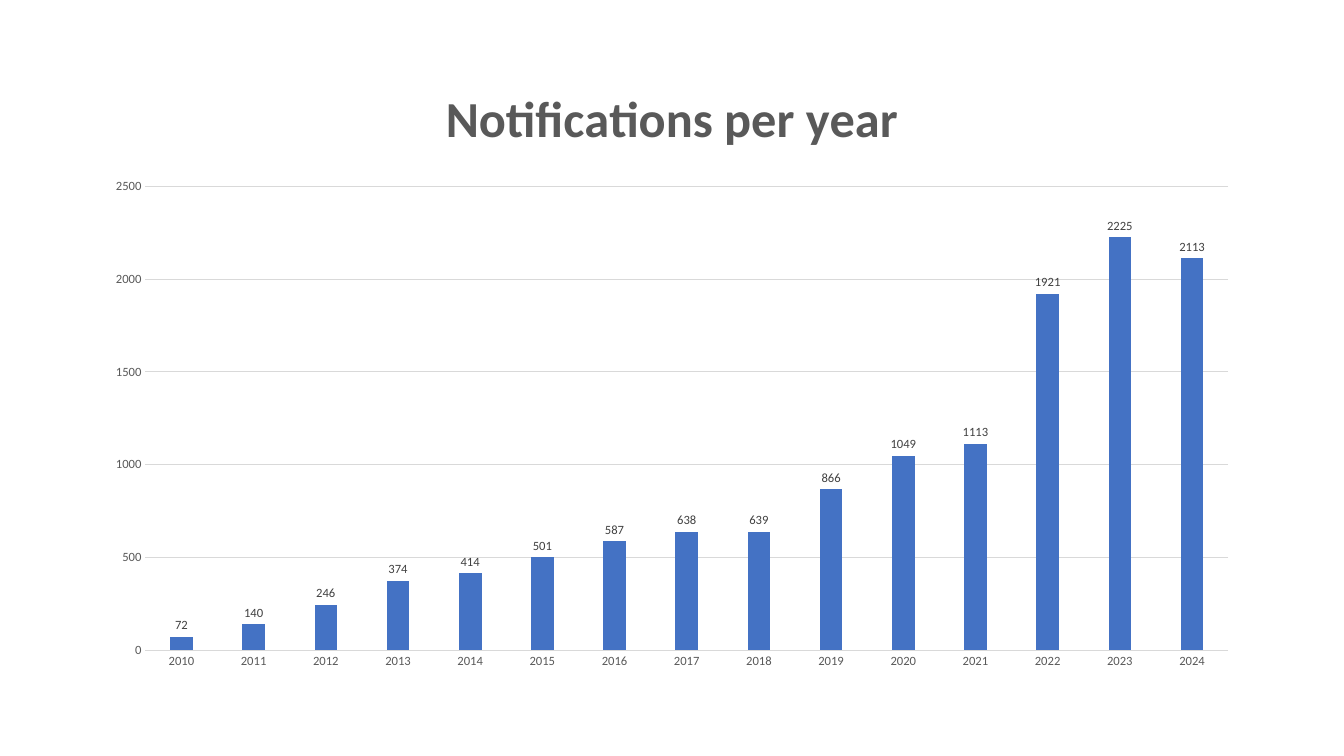
from pptx import Presentation
from pptx.chart.data import CategoryChartData
from pptx.dml.color import RGBColor
from pptx.enum.chart import XL_CHART_TYPE, XL_LABEL_POSITION, XL_TICK_MARK
from pptx.util import Inches, Pt

COLUMNS = XL_CHART_TYPE.COLUMN_CLUSTERED
OUTSIDE_END = XL_LABEL_POSITION.OUTSIDE_END
NO_TICKS = XL_TICK_MARK.NONE

FONT = "Calibri"
BLUE = "4472C4"
GREY = "595959"
DARK_GREY = "404040"
LIGHT_GREY = "D9D9D9"

FIRST_YEAR = 2010
NOTIFICATIONS = [72, 140, 246, 374, 414, 501, 587, 638, 639,
                 866, 1049, 1113, 1921, 2225, 2113]


def rgb(color):
    return RGBColor.from_string(color)


def set_font(font, size, color, bold=False):
    font.name = FONT
    font.size = Pt(size)
    font.bold = bold
    font.color.rgb = rgb(color)


def set_line(line, color, width=0.75):
    line.color.rgb = rgb(color)
    line.width = Pt(width)


def style_axis(axis):
    axis.major_tick_mark = NO_TICKS
    axis.minor_tick_mark = NO_TICKS
    set_font(axis.tick_labels.font, 9, GREY)


def add_column_chart(slide, categories, values):
    data = CategoryChartData()
    data.categories = categories
    data.add_series("Notifications", values)
    frame = slide.shapes.add_chart(COLUMNS, Inches(0.92), Inches(0.56),
                                   Inches(11.5), Inches(6.2), data)
    chart = frame.chart
    chart.has_legend = False
    set_font(chart.font, 10, "000000")
    return chart


def style_title(chart, text):
    chart.has_title = True
    chart.chart_title.include_in_layout = False
    paragraph = chart.chart_title.text_frame.paragraphs[0]
    paragraph.text = text
    set_font(paragraph.font, 36, GREY, bold=True)


def style_axes(chart):
    style_axis(chart.category_axis)
    set_line(chart.category_axis.format.line, LIGHT_GREY)

    value_axis = chart.value_axis
    style_axis(value_axis)
    value_axis.minimum_scale = 0
    value_axis.maximum_scale = 2500
    value_axis.major_unit = 500
    value_axis.format.line.fill.background()
    value_axis.has_major_gridlines = True
    set_line(value_axis.major_gridlines.format.line, LIGHT_GREY)


def style_columns(chart):
    plot = chart.plots[0]
    plot.vary_by_categories = False
    plot.gap_width = 219
    plot.overlap = -27
    series = plot.series[0]
    series.format.fill.solid()
    series.format.fill.fore_color.rgb = rgb(BLUE)

    labels = series.data_labels
    labels.show_value = True
    labels.position = OUTSIDE_END
    set_font(labels.font, 9, DARK_GREY)


def main():
    presentation = Presentation()
    presentation.slide_width = Inches(13.34)
    presentation.slide_height = Inches(7.5)
    slide = presentation.slides.add_slide(presentation.slide_layouts[6])

    # Column chart of notifications by year
    years = [str(FIRST_YEAR + i) for i in range(len(NOTIFICATIONS))]
    chart = add_column_chart(slide, years, NOTIFICATIONS)
    style_title(chart, "Notifications per year")
    style_axes(chart)
    style_columns(chart)

    presentation.save("out.pptx")


if __name__ == "__main__":
    main()
